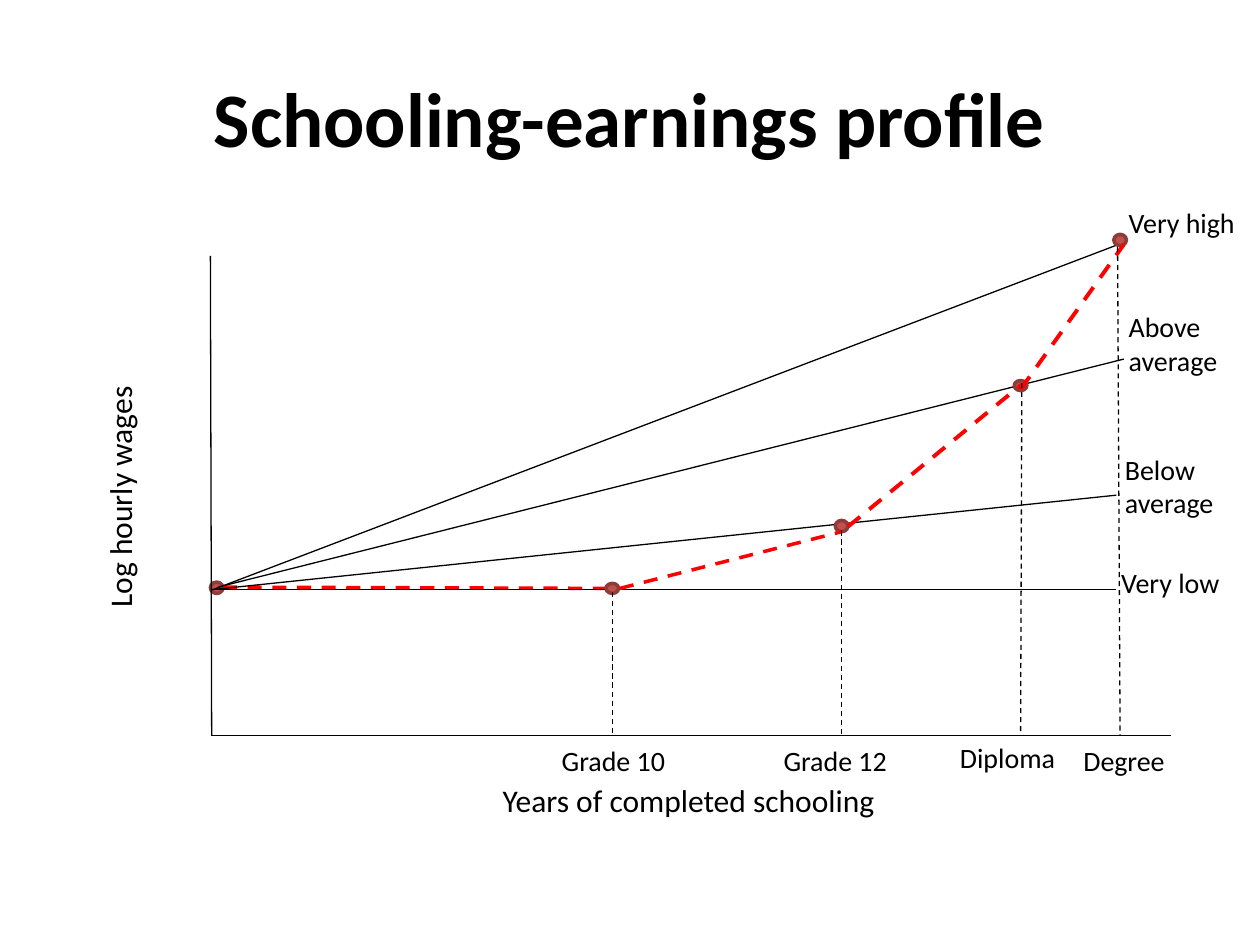
from pptx import Presentation
from pptx.dml.color import RGBColor
from pptx.enum import dml, shapes, text
from pptx.oxml.ns import qn
from pptx.util import Inches, Pt
from lxml import etree

INK = {"black": "000000", "red": "FF0000", "dot": "C0504D", "rim": "8E3B39"}
FONT = "Calibri"
TITLE = "Schooling-earnings profile"

# Lines: start x, y, end x, y in inches
AXES = [(1.67, 2.03, 1.68, 5.84), (1.68, 5.84, 9.29, 5.84)]
RAYS = [
    (1.73, 4.66, 8.92, 2.85),
    (1.69, 4.68, 8.86, 4.68),
    (1.68, 4.68, 8.86, 3.93),
    (1.69, 4.68, 8.93, 1.92),
]
DROPS = [
    (4.86, 4.7, 4.86, 5.84),
    (6.68, 4.21, 6.68, 5.84),
    (8.11, 3.04, 8.1, 5.84),
    (8.87, 1.96, 8.89, 5.84),
]
# Profile segments, each with its line width
PROFILE = [
    (1.77, 4.66, 4.81, 4.67, 2),
    (4.92, 4.67, 6.68, 4.22, 2),
    (6.73, 4.18, 8.11, 3.05, 2.25),
    (8.1, 3.09, 8.92, 1.94, 2.25),
]
# Markers: left, top, height
DOTS = [
    (1.67, 4.62, 0.09),
    (4.81, 4.63, 0.08),
    (6.63, 4.13, 0.09),
    (8.05, 3.02, 0.08),
    (8.84, 1.86, 0.09),
]
# Labels: wording, left, top, width, height
LABELS = [
    ("Very high", 8.86, 1.58, 1.14, 0.37),
    ("Above average", 8.86, 2.41, 1.14, 0.64),
    ("Below average", 8.83, 3.54, 1.14, 0.64),
    ("Very low", 8.8, 4.44, 1.14, 0.37),
    ("Grade 10", 4.36, 5.85, 1.12, 0.37),
    ("Grade 12", 6.12, 5.85, 1.12, 0.37),
    ("Diploma", 7.52, 5.83, 0.99, 0.37),
    ("Degree", 8.5, 5.85, 0.87, 0.37),
]
# Axis names: wording, left, top, width, height, rotation
NAMES = [
    ("Years of completed schooling", 3.89, 6.15, 3.19, 0.4, 0),
    ("Log hourly wages", -0.04, 3.73, 1.98, 0.4, 270),
]


def color(name):
    return RGBColor.from_string(INK[name])


def style(font, size, bold=False):
    font.name, font.size, font.bold = FONT, Pt(size), bold
    font.color.rgb = color("black")


def add_line(slide, ends, ink="black", width=0.75, dash=False):
    line = slide.shapes.add_connector(
        shapes.MSO_CONNECTOR.STRAIGHT, *map(Inches, ends))
    line.line.color.rgb = color(ink)
    line.line.width = Pt(width)
    if dash:
        line.line.dash_style = dml.MSO_LINE.DASH
    etree.SubElement(line._element.spPr, qn("a:effectLst"))


def add_dot(slide, left, top, high):
    dot = slide.shapes.add_shape(
        shapes.MSO_SHAPE.OVAL, *map(Inches, (left, top, 0.1, high)))
    dot.shadow.inherit = False
    dot.fill.solid()
    dot.fill.fore_color.rgb = color("dot")
    dot.line.color.rgb = color("rim")
    dot.line.width = Pt(2)


def add_label(slide, words, box, size, wrap=True, turn=0):
    label = slide.shapes.add_textbox(*map(Inches, box))
    label.rotation = turn
    frame = label.text_frame
    frame.word_wrap = wrap
    frame.auto_size = text.MSO_AUTO_SIZE.SHAPE_TO_FIT_TEXT
    frame.text = words
    style(frame.paragraphs[0].font, size)


def main():
    deck = Presentation()
    deck.slide_width, deck.slide_height = Inches(10), Inches(7.5)
    slide = deck.slides.add_slide(deck.slide_layouts[5])

    # Title
    title = slide.shapes.title
    title.left, title.top, title.width, title.height = map(
        Inches, (0.5, 0.3, 9, 1.25))
    title.text_frame.text = TITLE
    title.text_frame.vertical_anchor = text.MSO_ANCHOR.MIDDLE
    head = title.text_frame.paragraphs[0]
    head.alignment = text.PP_ALIGN.CENTER
    style(head.font, 44, True)

    # Origin marker and first segment lie under the rays
    add_dot(slide, *DOTS[0])
    add_line(slide, PROFILE[0][:4], "red", PROFILE[0][4], True)
    for ends in RAYS + AXES:
        add_line(slide, ends)

    # Remaining markers and profile
    for dot in DOTS[1:]:
        add_dot(slide, *dot)
    for *ends, width in PROFILE[1:]:
        add_line(slide, ends, "red", width, True)

    # Drop lines to the schooling axis
    for ends in DROPS:
        add_line(slide, ends, dash=True)

    # Labels and axis names
    for words, *box in LABELS:
        add_label(slide, words, box, 16)
    for words, *box, turn in NAMES:
        add_label(slide, words, box, 18, False, turn)

    deck.save("out.pptx")


if __name__ == "__main__":
    main()
